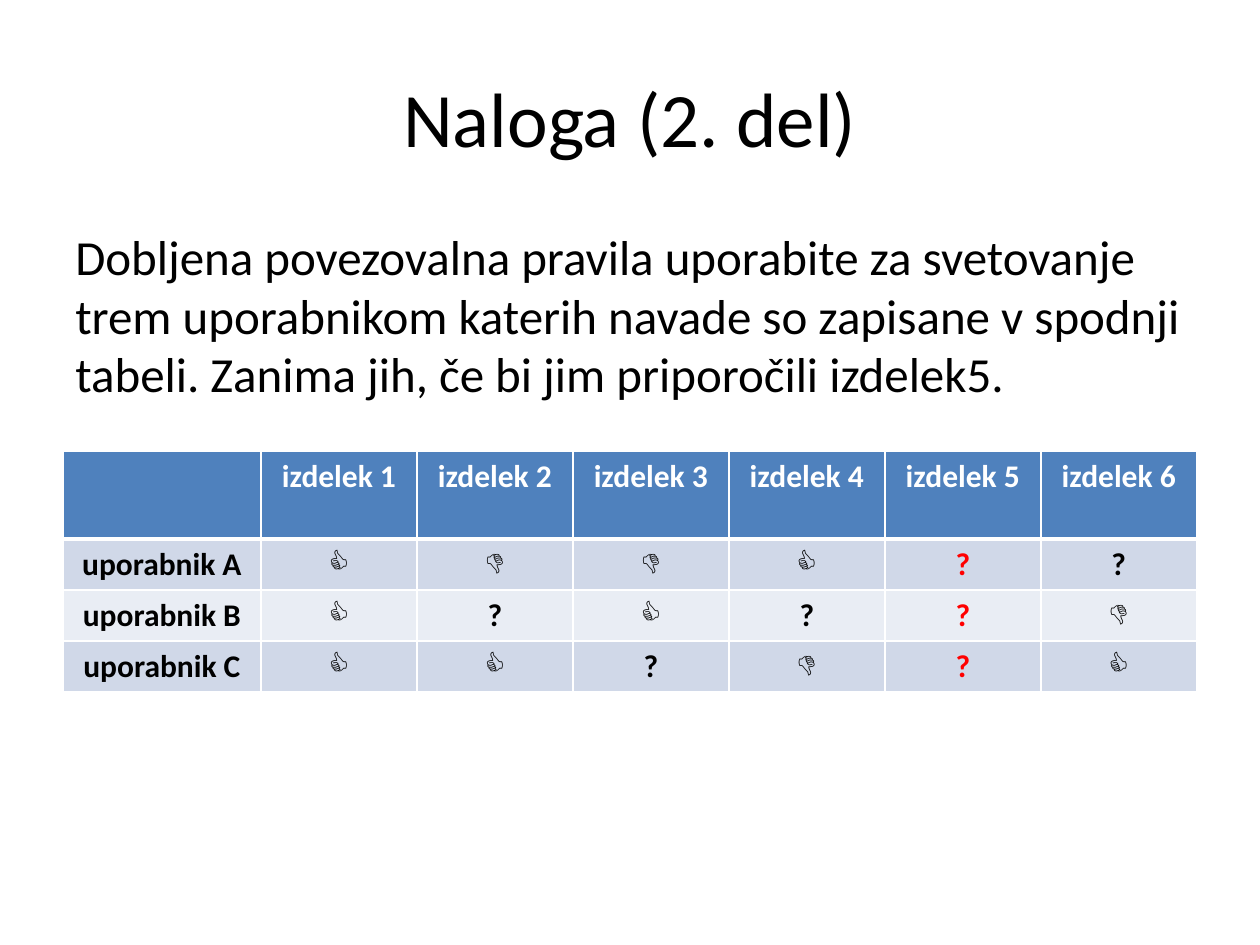
from lxml.etree import SubElement
from pptx import Presentation
from pptx.dml.color import RGBColor
from pptx.enum.text import MSO_ANCHOR as Anchor, PP_ALIGN as Align
from pptx.oxml.ns import qn
from pptx.util import Emu, Pt


def px(length):
    return Emu(round(length * 914400 / 126))


def style(para, size, color, font="Calibri", bold=False):
    for span in para.runs:
        span.font.size = Pt(size)
        span.font.name = font
        span.font.bold = bold
        span.font.color.rgb = RGBColor.from_string(color)


deck = Presentation()
deck.slide_width, deck.slide_height = px(1260), px(945)
page = deck.slides.add_slide(deck.slide_layouts[5])

title = page.shapes.title
title.left, title.top, title.width, title.height = px(63), px(38), px(1134), px(157)
title.text_frame.text = "Naloga (2. del)"
title.text_frame.vertical_anchor = Anchor.MIDDLE
title.text_frame.paragraphs[0].alignment = Align.CENTER
style(title.text_frame.paragraphs[0], 44, "000000")

task = page.shapes.add_textbox(px(63), px(220), px(1134), px(624))
task.text_frame.word_wrap = True
task.text_frame.text = (
    "Dobljena povezovalna pravila uporabite za svetovanje trem uporabnikom "
    "katerih navade so zapisane v spodnji tabeli. "
    "Zanima jih, če bi jim priporočili izdelek5."
)
style(task.text_frame.paragraphs[0], 28, "000000")

PRODUCT_COUNT = 6
ASKED_PRODUCT = 5
ratings = [
    ["", *[f"izdelek {number}" for number in range(1, PRODUCT_COUNT + 1)]],
    ["uporabnik A", "👍", "👎", "👎", "👍", "?", "?"],
    ["uporabnik B", "👍", "?", "👍", "?", "?", "👎"],
    ["uporabnik C", "👍", "👍", "?", "👎", "?", "👍"],
]
row_fills = ["4F81BD", "D0D8E8", "E9EDF4", "D0D8E8"]
row_heights = [88, 51, 51, 51]
column_widths = [198] + [156] * PRODUCT_COUNT

table = page.shapes.add_table(
    len(row_heights), len(column_widths),
    px(63), px(451), px(sum(column_widths)), px(sum(row_heights)),
).table
for column, width in zip(table.columns, column_widths):
    column.width = px(width)
for row, height in zip(table.rows, row_heights):
    row.height = px(height)

for r, values in enumerate(ratings):
    for c, value in enumerate(values):
        cell = table.cell(r, c)
        cell.text_frame.text = value
        para = cell.text_frame.paragraphs[0]
        para.alignment = Align.CENTER
        if r == 0:
            color = "FFFFFF"
        else:
            color = "FF0000" if c == ASKED_PRODUCT else "000000"
        font = "Arial" if value in ("👍", "👎") else "Calibri"
        style(para, 18, color, font, bold=True)

        properties = cell._tc.get_or_add_tcPr()
        for side in ("lnL", "lnR", "lnT", "lnB"):
            under_header = (r, side) in ((0, "lnB"), (1, "lnT"))
            line = SubElement(properties, qn(f"a:{side}"), w=str(Pt(3 if under_header else 1)))
            paint = SubElement(line, qn("a:solidFill"))
            SubElement(paint, qn("a:srgbClr"), val="FFFFFF")
        cell.fill.solid()
        cell.fill.fore_color.rgb = RGBColor.from_string(row_fills[r])

deck.save("out.pptx")
